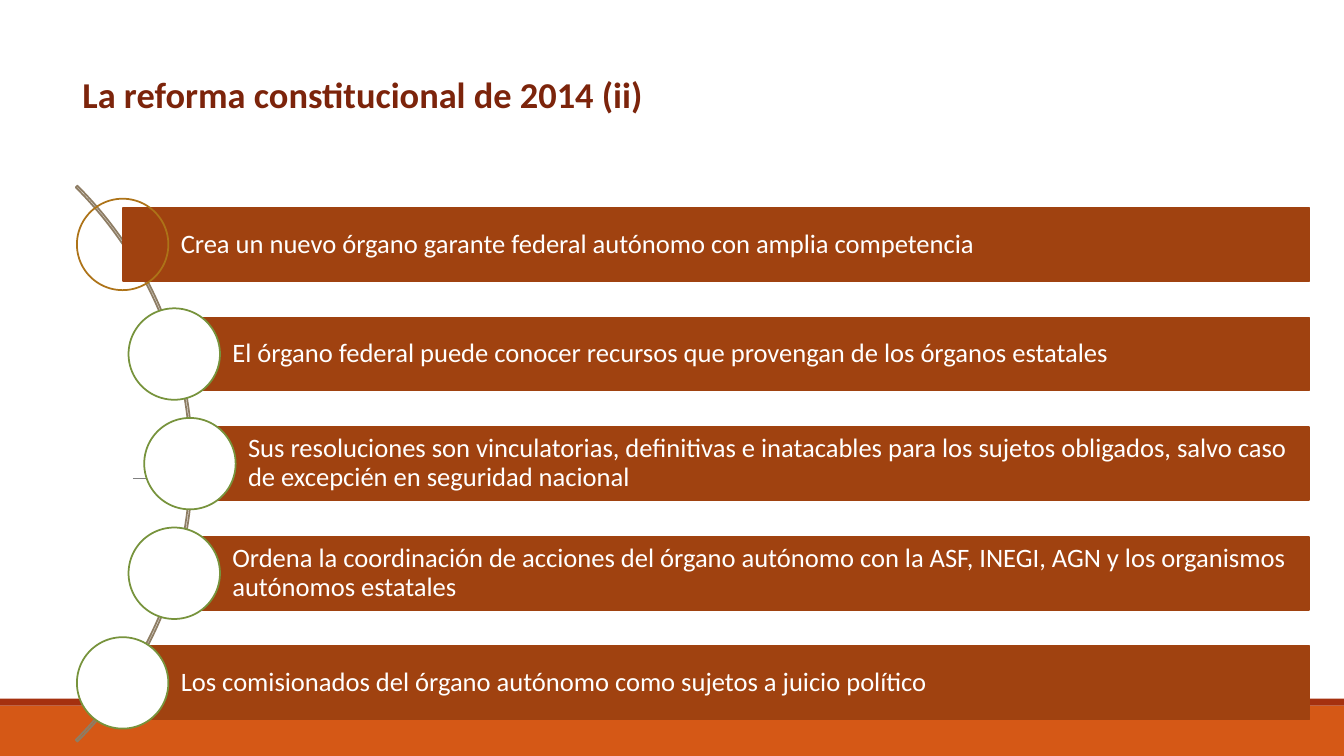
from math import sqrt

from lxml import etree
from pptx import Presentation
from pptx.dml.color import RGBColor
from pptx.enum.shapes import MSO_CONNECTOR, MSO_SHAPE as SHAPE
from pptx.enum.text import MSO_ANCHOR as ANCHOR, PP_ALIGN as ALIGN
from pptx.oxml.ns import qn
from pptx.util import Pt

# Content
TITLE = "La reforma constitucional de 2014 (ii)"
POINTS = [
    "Crea un nuevo órgano garante federal autónomo con amplia competencia",
    "El órgano federal puede conocer recursos que provengan de los órganos estatales",
    "Sus resoluciones son vinculatorias, definitivas e inatacables para los sujetos "
    "obligados, salvo caso de excepcién en seguridad nacional",
    "Ordena la coordinación de acciones del órgano autónomo con la ASF, INEGI, AGN "
    "y los organismos autónomos estatales",
    "Los comisionados del órgano autónomo como sujetos a juicio político",
]

# Colours
WHITE = RGBColor(0xFF, 0xFF, 0xFF)
ORANGE = RGBColor(0xD5, 0x58, 0x16)
RED = RGBColor(0xA5, 0x30, 0x0F)
BROWN = RGBColor(0xA0, 0x42, 0x10)
DARK_RED = RGBColor(0x7C, 0x24, 0x0B)
TAUPE = RGBColor(0x8E, 0x7D, 0x64)
GOLD = RGBColor(0xAD, 0x73, 0x18)
GREEN = RGBColor(0x77, 0x93, 0x3C)
GREY = RGBColor(0x80, 0x80, 0x80)

# Text formats
TITLE_FONT = {"name": "Calibri", "size": Pt(26), "bold": True}
POINT_FONT = {"name": "Calibri", "size": Pt(19), "bold": False}
BAR_FRAME = {"word_wrap": True, "vertical_anchor": ANCHOR.MIDDLE,
             "margin_left": Pt(41.5), "margin_right": Pt(3.6),
             "margin_top": Pt(3.6), "margin_bottom": Pt(3.6)}

# Layout, in points
WIDTH, HEIGHT = 960, 540
ARC_X, ARC_Y, ARC_R = -143.3, 331.2, 280.8
TRACK_R = 279
PITCH, BAR_H, BAR_RIGHT, DOT = 78.3, 52.2, 935.3, 65.3


def add_box(kind, x, y, w, h, fill=None, line=None):
    sp = s.shapes.add_shape(kind, Pt(x), Pt(y), Pt(w), Pt(h))
    sp.shadow.inherit = False
    if fill is None:
        sp.fill.background()
    else:
        sp.fill.solid()
        sp.fill.fore_color.rgb = fill
    if line is None:
        sp.line.fill.background()
    else:
        sp.line.color.rgb = line
        sp.line.width = Pt(1.25)
    return sp


def write(tf, text, font, color):
    p = tf.paragraphs[0]
    p.alignment = ALIGN.LEFT
    r = p.add_run()
    r.text = text
    for key, value in font.items():
        setattr(r.font, key, value)
    r.font.color.rgb = color
    return p


prs = Presentation()
prs.slide_width, prs.slide_height = Pt(WIDTH), Pt(HEIGHT)
s = prs.slides.add_slide(prs.slide_layouts[6])

# Footer bands and thin rule
add_box(SHAPE.RECTANGLE, 0, 504, WIDTH, 36, ORANGE)
add_box(SHAPE.RECTANGLE, 0, 499, WIDTH, 5, RED)
rule = s.shapes.add_connector(MSO_CONNECTOR.STRAIGHT, Pt(95), Pt(342), Pt(872.6), Pt(342))
rule.line.color.rgb = GREY
rule.line.width = Pt(0.5)
etree.SubElement(rule._element.spPr, qn("a:effectLst"))

# Title
title = s.shapes.add_textbox(Pt(51.8), Pt(48.2), Pt(778.3), Pt(38.9))
title.text_frame.word_wrap = True
write(title.text_frame, TITLE, TITLE_FONT, DARK_RED)

# Arc from -45 to 45 degrees
arc = add_box(SHAPE.BLOCK_ARC, ARC_X - ARC_R, ARC_Y - ARC_R, 2 * ARC_R, 2 * ARC_R, line=TAUPE)
for i, value in enumerate((189, 27, 0.003)):
    arc.adjustments[i] = value

# Bars and circles, each centred on the arc
for i, text in enumerate(POINTS):
    dy = (i - (len(POINTS) - 1) / 2) * PITCH
    x, y = ARC_X + sqrt(TRACK_R ** 2 - dy ** 2), ARC_Y + dy
    bar = add_box(SHAPE.RECTANGLE, x, y - BAR_H / 2, BAR_RIGHT - x, BAR_H, BROWN, BROWN)
    for key, value in BAR_FRAME.items():
        setattr(bar.text_frame, key, value)
    write(bar.text_frame, text, POINT_FONT, WHITE).line_spacing = 0.9
    fill, line = (WHITE, GREEN) if i else (None, GOLD)
    add_box(SHAPE.OVAL, x - DOT / 2, y - DOT / 2, DOT, DOT, fill, line)

prs.save("out.pptx")
